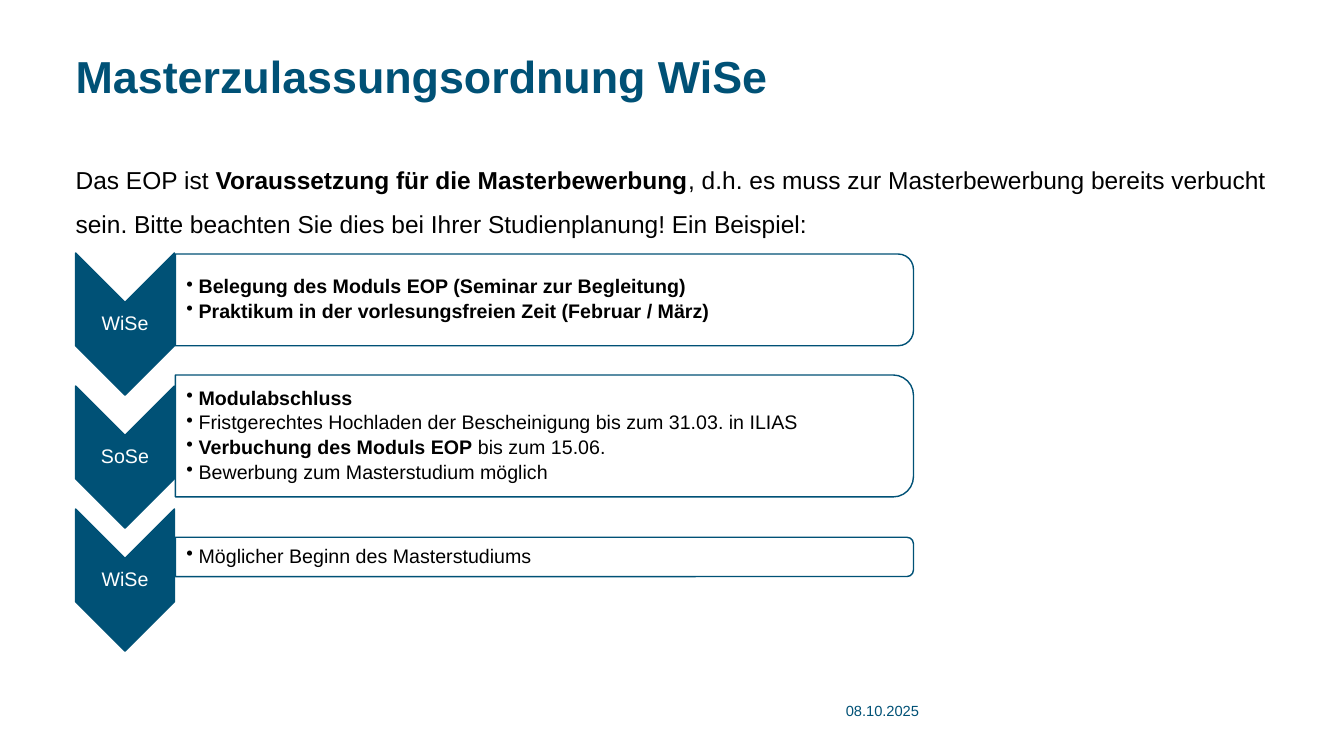
from lxml import etree
from pptx import Presentation
from pptx.dml.color import RGBColor
from pptx.enum.shapes import MSO_SHAPE
from pptx.enum.text import MSO_ANCHOR, PP_ALIGN
from pptx.oxml.ns import qn
from pptx.util import Inches, Pt

CHEVRON, PANEL = MSO_SHAPE.CHEVRON, MSO_SHAPE.ROUND_2_SAME_RECTANGLE
TOP, MIDDLE = MSO_ANCHOR.TOP, MSO_ANCHOR.MIDDLE
LEFT, CENTER = PP_ALIGN.LEFT, PP_ALIGN.CENTER
BLUE = RGBColor(0x00, 0x51, 0x76)
WHITE = RGBColor(0xFF, 0xFF, 0xFF)
BLACK = RGBColor(0x00, 0x00, 0x00)

MARGIN, CONTENT_WIDTH = 0.75, 11.98
CHEVRON_WIDTH, CHEVRON_HEIGHT = 0.98, 1.41
PANEL_LEFT, PANEL_WIDTH = 1.74, 7.32

INTRO = [
    ("Das EOP ist ", False),
    ("Voraussetzung für die Masterbewerbung", True),
    (", d.h. es muss zur Masterbewerbung bereits verbucht sein. "
     "Bitte beachten Sie dies bei Ihrer Studienplanung! Ein Beispiel:", False),
]
SEMESTERS = [
    {"label": "WiSe", "chevron_top": 2.51, "panel_top": 2.52, "panel_height": 0.91,
     "items": [[("Belegung des Moduls EOP (Seminar zur Begleitung)", True)],
               [("Praktikum in der vorlesungsfreien Zeit (Februar / März)", True)]]},
    {"label": "SoSe", "chevron_top": 3.83, "panel_top": 3.72, "panel_height": 1.21,
     "items": [[("Modulabschluss", True)],
               [("Fristgerechtes Hochladen der Bescheinigung bis zum 31.03. in ILIAS", False)],
               [("Verbuchung des Moduls EOP ", True), ("bis zum 15.06.", False)],
               [("Bewerbung zum Masterstudium möglich", False)]]},
    {"label": "WiSe", "chevron_top": 5.05, "panel_top": 5.33, "panel_height": 0.39,
     "items": [[("Möglicher Beginn des Masterstudiums", False)]]},
]


def set_attributes(target, values):
    """Set each named format value on the target."""
    for name, value in values.items():
        setattr(target, name, value)


def add_bullet(paragraph):
    """Give the paragraph a hanging round bullet."""
    properties = paragraph._p.get_or_add_pPr()
    properties.set("marL", str(Inches(0.12)))
    properties.set("indent", str(-Inches(0.12)))
    etree.SubElement(properties, qn("a:buChar")).set("char", "•")


def write_text(shape, paragraphs, size, color, anchor=TOP, inset=0, left_inset=0,
               bulleted=False, **spacing):
    """Fill the shape with paragraphs made of (text, bold) runs."""
    frame = shape.text_frame
    set_attributes(frame, {
        "word_wrap": True, "vertical_anchor": anchor,
        "margin_left": Inches(left_inset), "margin_right": Inches(inset),
        "margin_top": Inches(inset), "margin_bottom": Inches(inset)})
    for index, runs in enumerate(paragraphs):
        paragraph = frame.add_paragraph() if index else frame.paragraphs[0]
        set_attributes(paragraph, {"alignment": LEFT, "space_before": Pt(0), **spacing})
        if bulleted:
            add_bullet(paragraph)
        for text, bold in runs:
            run = paragraph.add_run()
            run.text = text
            set_attributes(run.font, {"name": "Arial", "size": Pt(size), "bold": bold})
            run.font.color.rgb = color


def add_text(slide, box, paragraphs, size, color, **options):
    """Add a text box at the given box in inches."""
    shape = slide.shapes.add_textbox(*map(Inches, box))
    write_text(shape, paragraphs, size, color, **options)


def add_turned_shape(slide, kind, box, fill):
    """Add a shape turned by 90 degrees that covers the given box."""
    left, top, width, height = box
    shift = (width - height) / 2
    shape = slide.shapes.add_shape(
        kind, *map(Inches, (left + shift, top - shift, height, width)))
    set_attributes(shape, {"rotation": 90})
    shape.shadow.inherit = False
    shape.fill.solid()
    shape.fill.fore_color.rgb = fill
    shape.line.color.rgb = BLUE
    shape.line.width = Pt(1)
    return shape


def add_title(slide, box):
    """Place and write the slide title."""
    title = slide.shapes.title
    left, top, width, height = map(Inches, box)
    set_attributes(title, {"left": left, "top": top, "width": width, "height": height})
    write_text(title, [[("Masterzulassungsordnung WiSe", True)]], 32, BLUE,
               line_spacing=0.9)


def add_chevron(slide, box, label):
    """Add a downward chevron with its semester label."""
    left, top, width, height = box
    add_turned_shape(slide, CHEVRON, box, BLUE)
    notch = width / 2
    add_text(slide, (left, top + notch, width, height - 2 * notch), [[(label, False)]],
             14, WHITE, anchor=MIDDLE, inset=0.01, left_inset=0.01,
             alignment=CENTER, line_spacing=0.9, space_after=Pt(5))


def add_panel(slide, box, items):
    """Add a panel rounded on the right with its bulleted items."""
    left, top, width, height = box
    panel = add_turned_shape(slide, PANEL, box, WHITE)
    color = panel._element.spPr.find(qn("a:solidFill")).find(qn("a:srgbClr"))
    etree.SubElement(color, qn("a:alpha")).set("val", "90000")
    add_text(slide, (left, top + 0.04, width - 0.05, height - 0.08), items, 14, BLACK,
             anchor=MIDDLE, inset=0.01, left_inset=0.11, bulleted=True,
             line_spacing=0.9, space_after=Pt(2.4))


def build_slide(presentation):
    """Build the slide on the admission rules."""
    slide = presentation.slides.add_slide(presentation.slide_layouts[5])
    add_title(slide, (MARGIN, 0.54, CONTENT_WIDTH, 1.33))
    add_text(slide, (MARGIN, 1.49, CONTENT_WIDTH, 0.74), [INTRO], 17.5, BLACK,
             line_spacing=1.5, space_after=Pt(12))
    add_text(slide, (8.39, 6.92, 1.34, 0.27), [[("08.10.2025", False)]], 10.5, BLUE,
             anchor=MIDDLE)
    for semester in SEMESTERS:
        add_chevron(slide, (MARGIN, semester["chevron_top"], CHEVRON_WIDTH, CHEVRON_HEIGHT),
                    semester["label"])
        add_panel(slide, (PANEL_LEFT, semester["panel_top"], PANEL_WIDTH,
                          semester["panel_height"]), semester["items"])


def main():
    """Create and save the presentation."""
    presentation = Presentation()
    set_attributes(presentation, {"slide_width": Inches(13.33), "slide_height": Inches(7.5)})
    build_slide(presentation)
    presentation.save("out.pptx")


if __name__ == "__main__":
    main()
